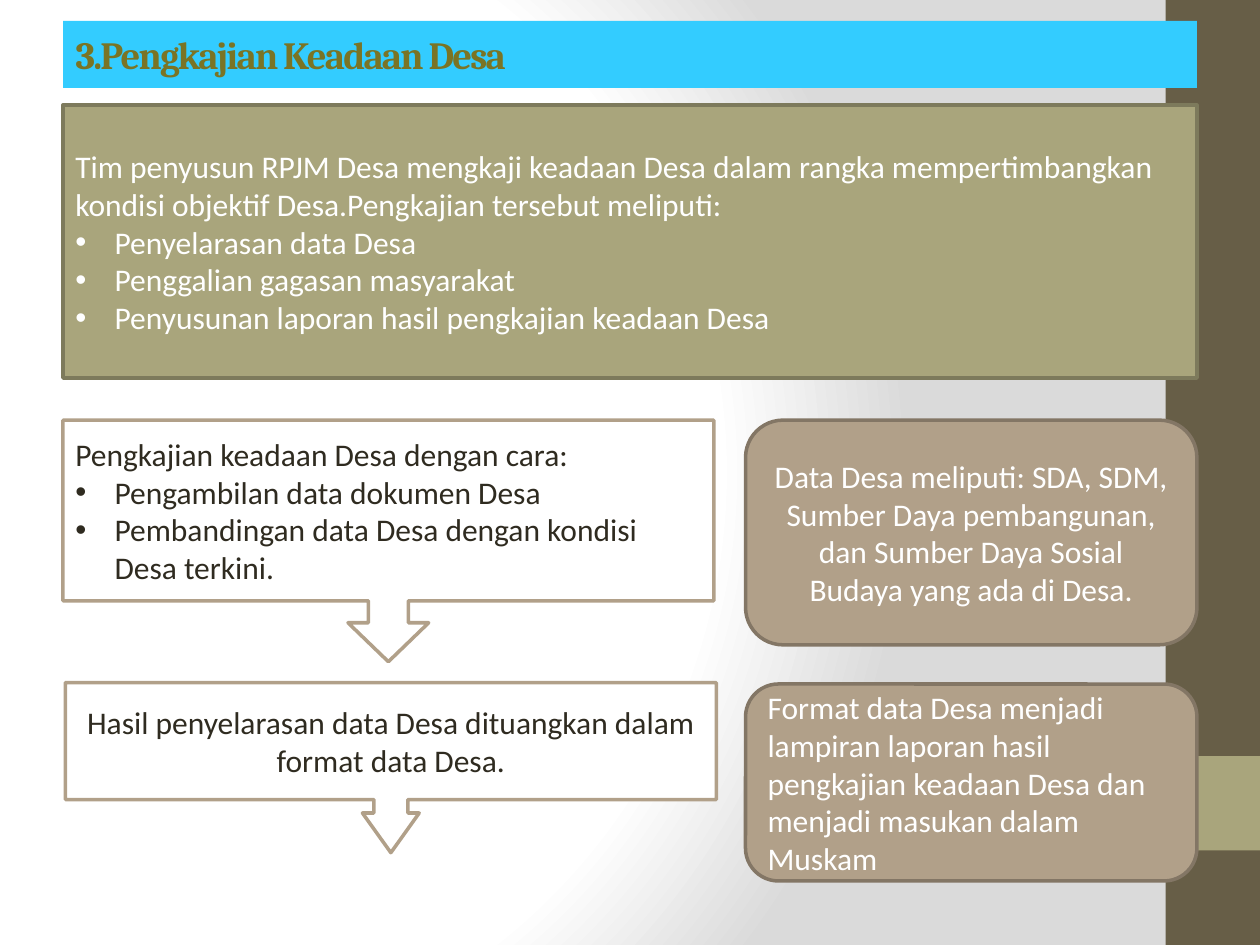
from lxml import etree
from pptx import Presentation
from pptx.dml.color import RGBColor
from pptx.enum.shapes import MSO_SHAPE
from pptx.enum.text import MSO_ANCHOR, MSO_AUTO_SIZE, PP_ALIGN
from pptx.oxml import parse_xml
from pptx.oxml.ns import qn
from pptx.util import Cm, Pt

RECT = MSO_SHAPE.RECTANGLE
PROCESS = MSO_SHAPE.FLOWCHART_PROCESS
CALLOUT = MSO_SHAPE.DOWN_ARROW_CALLOUT
ROUNDED = MSO_SHAPE.ROUNDED_RECTANGLE
LEFT, CENTER = PP_ALIGN.LEFT, PP_ALIGN.CENTER
MIDDLE = MSO_ANCHOR.MIDDLE
NO_AUTOFIT = MSO_AUTO_SIZE.NONE

COLORS = {
    "white": "FFFFFF", "grey": "DADADA", "ink": "2F2B20",
    "band": "675E47", "olive": "A9A57C", "olive_edge": "7D7A5C",
    "tan": "B1A089", "tan_edge": "837665",
    "title_fill": "33CCFF", "title_text": "7A7425",
}
BODY_FONT = {"name": "Calibri", "size": Pt(18)}
TITLE_FONT = {"name": "Cambria", "size": Pt(22), "bold": True}
FRAME_FORMAT = {"word_wrap": True, "auto_size": NO_AUTOFIT, "vertical_anchor": MIDDLE}
BULLET_INDENT = Cm(0.79)
MARGIN, CONTENT_WIDTH = 1.27, 22.86
LEFT_WIDTH, RIGHT_X, RIGHT_WIDTH = 13.12, 15.03, 9.1


def color(key):
    return RGBColor.from_string(COLORS[key])


def apply(target, values):
    for name, value in values.items():
        setattr(target, name, value)


def paint_background(slide):
    stops = "".join(
        f'<a:gs pos="{pos}000"><a:srgbClr val="{COLORS[key]}"/></a:gs>'
        for pos, key in ((0, "white"), (75, "white"), (100, "grey")))
    gradient = parse_xml(
        '<a:gradFill xmlns:a="http://schemas.openxmlformats.org/drawingml/2006/main" '
        f'rotWithShape="1"><a:gsLst>{stops}</a:gsLst><a:path path="circle">'
        '<a:fillToRect l="20000" t="50000" r="100000" b="50000"/></a:path></a:gradFill>')
    fill = slide.background.fill
    fill.solid()
    solid = slide.element.find(".//" + qn("p:bgPr")).find(qn("a:solidFill"))
    solid.getparent().replace(solid, gradient)


def add_panel(slide, kind, box, fill, edge=None, adjustments=()):
    panel = slide.shapes.add_shape(kind, *map(Cm, box))
    panel.shadow.inherit = False
    panel.fill.solid()
    panel.fill.fore_color.rgb = color(fill)
    if edge:
        panel.line.color.rgb = color(edge)
        panel.line.width = Pt(2)
    else:
        panel.line.fill.background()
    for index, value in enumerate(adjustments):
        panel.adjustments[index] = value
    return panel


def add_side_band(slide, box):
    x, y, width, height = box
    band = add_panel(slide, RECT, box, "band")
    accent = add_panel(slide, RECT, (x, y + height * 0.8, width, height * 0.1), "olive")
    tree = band.element.getparent()
    for position, part in enumerate((band, accent), start=2):
        tree.insert(position, part.element)


def place_title(slide, box, text):
    title = slide.shapes.title
    apply(title, dict(zip(("left", "top", "width", "height"), map(Cm, box))))
    title.fill.solid()
    title.fill.fore_color.rgb = color("title_fill")
    apply(title.text_frame, FRAME_FORMAT)
    heading = title.text_frame.paragraphs[0]
    heading.alignment = LEFT
    run = heading.add_run()
    run.text = text
    apply(run.font, TITLE_FONT)
    run.font.color.rgb = color("title_text")
    run.font._element.set("spc", "-100")


def add_bullet(paragraph):
    properties = paragraph._p.get_or_add_pPr()
    properties.set("marL", str(BULLET_INDENT))
    properties.set("indent", str(-BULLET_INDENT))
    etree.SubElement(properties, qn("a:buFont")).set("typeface", "Arial")
    etree.SubElement(properties, qn("a:buChar")).set("char", "•")


def write_text(panel, intro, bullets=(), ink="white", align=LEFT):
    frame = panel.text_frame
    apply(frame, FRAME_FORMAT)
    for index, text in enumerate((intro, *bullets)):
        paragraph = frame.add_paragraph() if index else frame.paragraphs[0]
        paragraph.alignment = align
        if index:
            add_bullet(paragraph)
        run = paragraph.add_run()
        run.text = text
        apply(run.font, BODY_FONT)
        run.font.color.rgb = color(ink)


def add_overview(slide, box, intro, bullets):
    write_text(add_panel(slide, PROCESS, box, "olive", "olive_edge"), intro, bullets)


def add_step(slide, box, adjustments, intro, bullets=(), align=LEFT):
    step = add_panel(slide, CALLOUT, box, "white", "tan", adjustments)
    write_text(step, intro, bullets, "ink", align)


def add_note(slide, box, text, align):
    write_text(add_panel(slide, ROUNDED, box, "tan", "tan_edge"), text, align=align)


def main():
    deck = Presentation()
    deck.slide_width, deck.slide_height = Cm(25.4), Cm(19.05)
    slide = deck.slides.add_slide(deck.slide_layouts[5])
    paint_background(slide)
    add_side_band(slide, (23.5, 0, 1.9, 19.05))
    place_title(slide, (MARGIN, 0.42, CONTENT_WIDTH, 1.35), "3.Pengkajian Keadaan Desa")
    add_overview(
        slide, (MARGIN, 2.12, CONTENT_WIDTH, 5.5),
        "Tim penyusun RPJM Desa mengkaji keadaan Desa dalam rangka mempertimbangkan "
        "kondisi objektif Desa.Pengkajian tersebut meliputi:",
        ("Penyelarasan data Desa", "Penggalian gagasan masyarakat",
         "Penyusunan laporan hasil pengkajian keadaan Desa"))
    add_step(
        slide, (1.32, 13.76, LEFT_WIDTH, 3.43), (0.2, 0.167, 0.233, 0.688),
        "Hasil penyelarasan data Desa dituangkan dalam format data Desa.", align=CENTER)
    add_step(
        slide, (MARGIN, 8.47, LEFT_WIDTH, 4.87), (0.166, 0.167, 0.161, 0.748),
        "Pengkajian keadaan Desa dengan cara:",
        ("Pengambilan data dokumen Desa",
         "Pembandingan data Desa dengan kondisi Desa terkini."))
    add_note(
        slide, (RIGHT_X, 8.47, RIGHT_WIDTH, 4.53),
        "Data Desa meliputi: SDA, SDM, Sumber Daya pembangunan, dan Sumber Daya Sosial "
        "Budaya yang ada di Desa.", CENTER)
    add_note(
        slide, (RIGHT_X, 13.79, RIGHT_WIDTH, 3.97),
        "Format data Desa menjadi lampiran laporan hasil pengkajian keadaan Desa dan "
        "menjadi masukan dalam Muskam", LEFT)
    deck.save("out.pptx")


if __name__ == "__main__":
    main()
